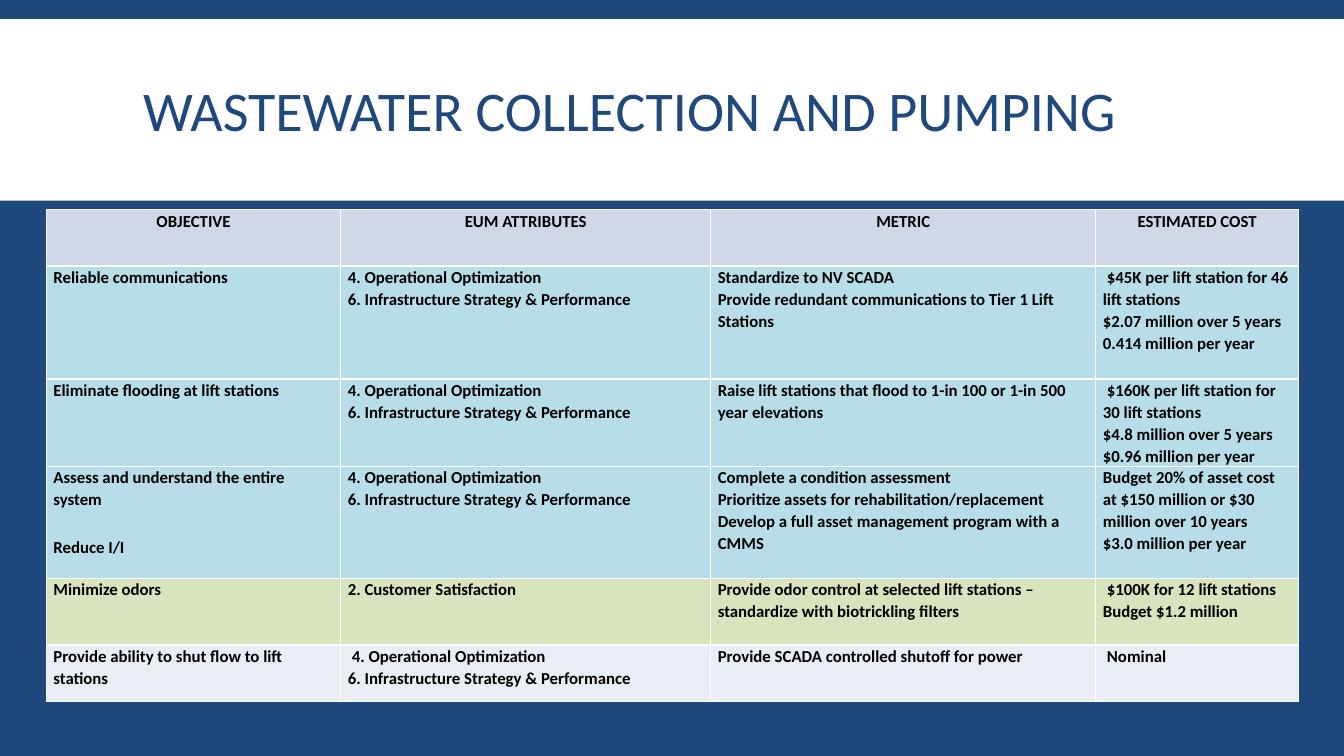
from lxml import etree
from pptx import Presentation
from pptx import util as u
from pptx.dml.color import RGBColor
from pptx.enum import shapes, text
from pptx.oxml.ns import qn

NAVY, WHITE, BLACK = "1F497D", "FFFFFF", "000000"
HEADER, BLUE, GREEN, GRAY = "D0D8E8", "B7DEE8", "D7E4BD", "E9EDF4"
COLUMN_WIDTHS = [2.92, 3.67, 3.82, 2.01]
ROW_HEIGHTS = [0.56, 1.12, 0.87, 1.11, 0.66, 0.56]
ROW_FILLS = [HEADER, BLUE, BLUE, BLUE, GREEN, GRAY]

OPERATIONS = "4. Operational Optimization"
INFRASTRUCTURE = "6. Infrastructure Strategy & Performance"


def indented(words):
    return words, {"indent": 0.04}


def spaced(words):
    return words, {"space_before": u.Pt(18)}


ROWS = [
    [["OBJECTIVE"], ["EUM ATTRIBUTES"], ["METRIC"], ["ESTIMATED COST"]],
    [["Reliable communications"],
     [OPERATIONS, INFRASTRUCTURE],
     ["Standardize to NV SCADA",
      "Provide redundant communications to Tier 1 Lift Stations"],
     [indented("$45K per lift station for 46 lift stations"),
      "$2.07 million over 5 years", "0.414 million per year"]],
    [["Eliminate flooding at lift stations"],
     [OPERATIONS, INFRASTRUCTURE],
     ["Raise lift stations that flood to 1-in 100 or 1-in 500 year elevations"],
     [indented("$160K per lift station for 30 lift stations"),
      "$4.8 million over 5 years", "$0.96 million per year"]],
    [["Assess and understand the entire system", spaced("Reduce I/I")],
     [OPERATIONS, INFRASTRUCTURE],
     ["Complete a condition assessment",
      "Prioritize assets for rehabilitation/replacement",
      "Develop a full asset management program with a CMMS"],
     ["Budget 20% of asset cost at $150 million or $30 million over 10 years",
      "$3.0 million per year"]],
    [["Minimize odors"],
     ["2. Customer Satisfaction"],
     ["Provide odor control at selected lift stations – "
      "standardize with biotrickling filters"],
     [indented("$100K for 12 lift stations"), "Budget $1.2 million"]],
    [["Provide ability to shut flow to lift stations"],
     [indented(OPERATIONS), INFRASTRUCTURE],
     ["Provide SCADA controlled shutoff for power"],
     [indented("Nominal")]],
]


def color(value):
    return RGBColor.from_string(value)


def apply(target, values):
    for name, value in values.items():
        setattr(target, name, value)


def paint(fill, value):
    fill.solid()
    fill.fore_color.rgb = color(value)


def style_font(font, size, value, bold):
    apply(font, {"name": "Calibri", "size": u.Pt(size), "bold": bold})
    font.color.rgb = color(value)


def add_band(page, left, top, width, height):
    """Place a white strip behind everything else on the page."""
    band = page.shapes.add_shape(
        shapes.MSO_SHAPE.RECTANGLE, *map(u.Inches, (left, top, width, height)))
    band.shadow.inherit = False
    paint(band.fill, WHITE)
    band.line.fill.background()
    page.shapes._spTree.insert(2, band._element)


def format_title(title, words):
    apply(title, {"left": u.Inches(1.32), "top": u.Inches(0.31),
                  "width": u.Inches(10.7), "height": u.Inches(1.65)})
    apply(title.text_frame, {"text": words, "word_wrap": True,
                             "vertical_anchor": text.MSO_ANCHOR.MIDDLE})
    para = title.text_frame.paragraphs[0]
    apply(para, {"alignment": text.PP_ALIGN.LEFT, "line_spacing": 0.85})
    style_font(para.runs[0].font, 40, NAVY, False)


def add_borders(cell):
    """Draw the four cell edges; they must precede the fill in the XML."""
    properties = cell._tc.get_or_add_tcPr()
    for position, side in enumerate(("lnL", "lnR", "lnT", "lnB")):
        edge = etree.Element(qn(f"a:{side}"), w=str(u.Pt(1)))
        solid = etree.SubElement(edge, qn("a:solidFill"))
        etree.SubElement(solid, qn("a:srgbClr"), val=WHITE)
        properties.insert(position, edge)


def write_cell(cell, lines, alignment):
    frame = cell.text_frame
    for number, line in enumerate(lines):
        words, extras = (line, {}) if isinstance(line, str) else line
        para = frame.add_paragraph() if number else frame.paragraphs[0]
        formats = dict(extras)
        indent = formats.pop("indent", 0)
        if indent:
            para._p.get_or_add_pPr().set("indent", str(u.Inches(indent)))
        apply(para, {"alignment": alignment, "line_spacing": 1.07, **formats})
        span = para.add_run()
        span.text = words
        style_font(span.font, 12, BLACK, True)


def add_objectives(page, left, top):
    frame = page.shapes.add_table(
        len(ROWS), len(COLUMN_WIDTHS), u.Inches(left), u.Inches(top),
        u.Inches(sum(COLUMN_WIDTHS)), u.Inches(sum(ROW_HEIGHTS)))
    table = frame.table
    for column, width in zip(table.columns, COLUMN_WIDTHS):
        column.width = u.Inches(width)
    for number, (row, height) in enumerate(zip(table.rows, ROW_HEIGHTS)):
        row.height = u.Inches(height)
        alignment = text.PP_ALIGN.LEFT if number else text.PP_ALIGN.CENTER
        for cell, lines in zip(row.cells, ROWS[number]):
            apply(cell, {"margin_left": u.Inches(0.07), "margin_top": 0,
                         "margin_right": u.Inches(0.07), "margin_bottom": 0})
            paint(cell.fill, ROW_FILLS[number])
            add_borders(cell)
            write_cell(cell, lines, alignment)


def main():
    deck = Presentation()
    apply(deck, {"slide_width": u.Inches(13.33), "slide_height": u.Inches(7.5)})
    page = deck.slides.add_slide(deck.slide_layouts[5])
    paint(page.background.fill, NAVY)
    add_band(page, 0, 0.19, 13.33, 1.8)
    format_title(page.shapes.title, "WASTEWATER COLLECTION AND PUMPING")
    add_objectives(page, 0.46, 2.08)
    deck.save("out.pptx")


if __name__ == "__main__":
    main()
